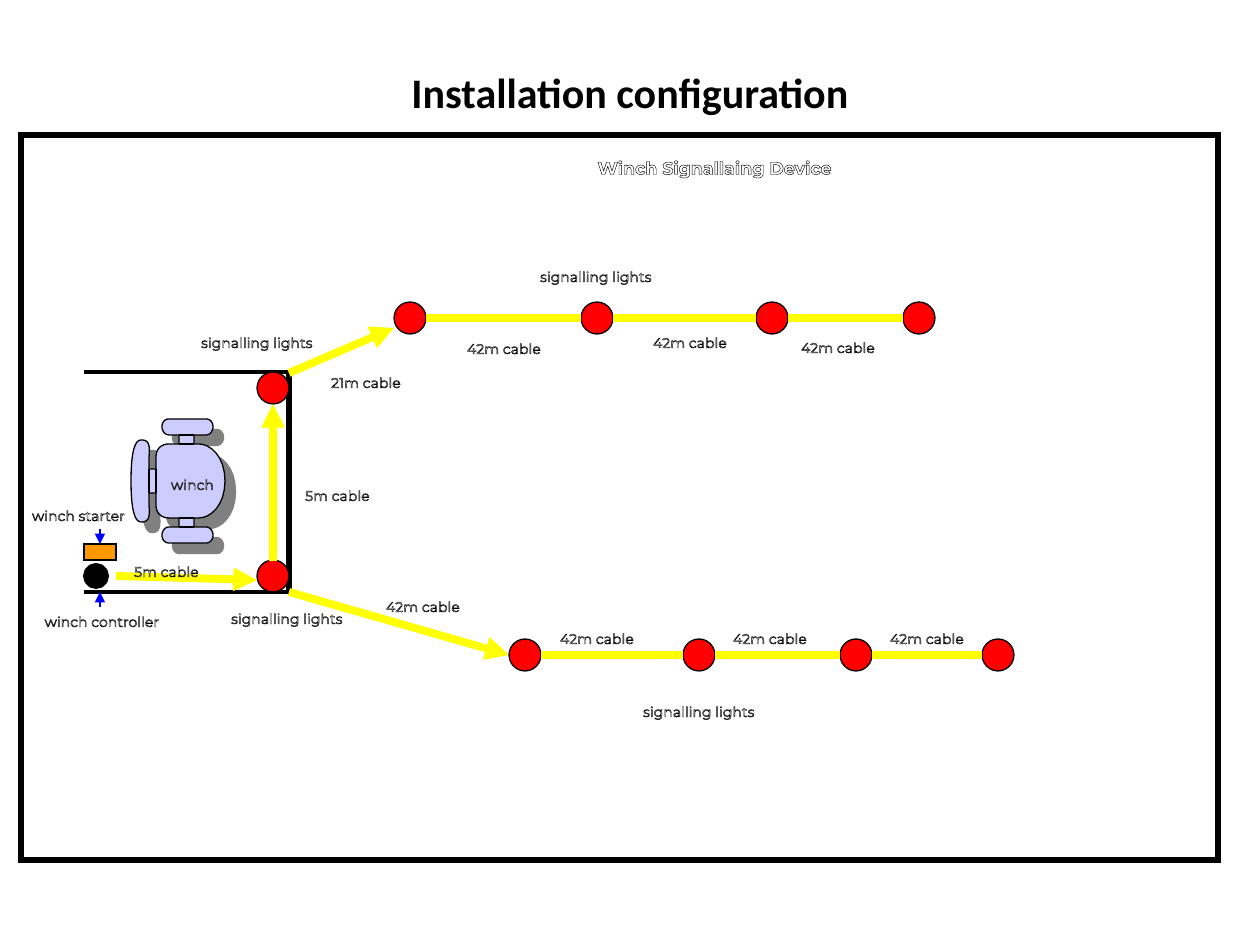
import pptx
import pptx.util
import pptx.dml.color
import pptx.enum.shapes
import pptx.enum.text
import pptx.oxml
import pptx.oxml.ns
import lxml.etree

EMU_PER_PX = 914400 / 126
LIGHT = 32  # diameter of a signalling light
COLORS = {
    "black": "000000", "white": "FFFFFF", "cable": "FFFF00", "light": "FF0000",
    "chair": "CCCCFF", "shadow": "808080", "starter": "FF9900", "pointer": "0000FF",
}
SHAPE = pptx.enum.shapes.MSO_SHAPE
qn = pptx.oxml.ns.qn


def px(length):
    return pptx.util.Emu(round(length * EMU_PER_PX))


def rgb(name):
    return pptx.dml.color.RGBColor.from_string(COLORS[name])


def style(shape, fill, weight=0.75):
    shape.shadow.inherit = False
    if fill:
        shape.fill.solid()
        shape.fill.fore_color.rgb = rgb(fill)
    else:
        shape.fill.background()
    shape.line.color.rgb = rgb("black")
    shape.line.width = pptx.util.Pt(weight)


def add_part(slide, kind, left, top, width, height, fill, weight=0.75):
    part = slide.shapes.add_shape(kind, px(left), px(top), px(width), px(height))
    style(part, fill, weight)
    # Sharp corners
    lxml.etree.SubElement(part._element.spPr.find(qn("a:ln")), qn("a:miter"), lim="800000")


def add_light(slide, left, top):
    add_part(slide, SHAPE.OVAL, left, top, LIGHT, LIGHT, "light")


def add_line(slide, start, end, color, weight, arrow=False):
    line = slide.shapes.add_connector(
        pptx.enum.shapes.MSO_CONNECTOR.STRAIGHT, *map(px, (*start, *end)))
    line.line.color.rgb = rgb(color)
    line.line.width = pptx.util.Pt(weight)
    properties = line._element.spPr
    if arrow:
        lxml.etree.SubElement(properties.find(qn("a:ln")), qn("a:tailEnd"), type="triangle")
    lxml.etree.SubElement(properties, qn("a:effectLst"))


def add_label(slide, text, left, top, width, size=8, bold=False):
    """Outlined white text, centred on the given width."""
    label = slide.shapes.add_textbox(px(left), px(top), px(width), px(20))
    frame = label.text_frame
    frame.word_wrap = False
    frame.margin_left = frame.margin_right = 0
    frame.margin_top = frame.margin_bottom = px(6)
    frame.paragraphs[0].alignment = pptx.enum.text.PP_ALIGN.CENTER
    run = frame.paragraphs[0].add_run()
    run.text = text
    run.font.name = "Montserrat"
    run.font.size = pptx.util.Pt(size)
    run.font.bold = bold
    run.font.color.rgb = rgb("white")
    run._r.get_or_add_rPr().insert(0, pptx.oxml.parse_xml(
        f'<a:ln {pptx.oxml.ns.nsdecls("a")} w="9525"><a:solidFill>'
        f'<a:srgbClr val="{COLORS["black"]}"/></a:solidFill></a:ln>'))


def curve(start, control_1, control_2, end, steps=8):
    """Points along a cubic curve, without its start."""
    points = []
    for step in range(1, steps + 1):
        t = step / steps
        weights = ((1 - t) ** 3, 3 * t * (1 - t) ** 2, 3 * t * t * (1 - t), t ** 3)
        corners = (start, control_1, control_2, end)
        points.append(tuple(sum(w * c[axis] for w, c in zip(weights, corners))
                            for axis in (0, 1)))
    return points


def add_chair(slide, left, middle):
    """Winch seat from above, mirrored about its middle line."""
    # Upper half from back to front: one point is a line, three are a curve
    segments = [
        [(0, -30), (4, -41), (10, -41)], [(15, -41), (20, -40), (18, -24)],
        [(18, -12)], [(25, -12)], [(25, -24)], [(25, -32), (30, -37), (38, -37)],
        [(48, -37)], [(48, -46)], [(38, -46)], [(34, -46), (31, -50), (31, -54)],
        [(31, -59), (34, -62), (38, -62)], [(75, -62)],
        [(79, -62), (82, -59), (82, -54)], [(82, -50), (79, -46), (75, -46)],
        [(63, -46)], [(63, -37)], [(68, -37)], [(79, -37), (94, -25), (94, 0)],
    ]
    upper = [(0, 0)]
    for segment in segments:
        upper += curve(upper[-1], *segment) if len(segment) == 3 else segment
    outline = upper + [(x, -y) for x, y in reversed(upper[1:-1])]
    # Seams where the arms and the back join the seat
    seams = [((48, y), (63, y)) for y in (-46, -37, 37, 46)]
    seams += [((x, -12), (x, 12)) for x in (18, 25)]

    def place(point):
        return px(left + point[0]), px(middle + point[1])

    builder = slide.shapes.build_freeform(*place(outline[0]))
    builder.add_line_segments([place(point) for point in outline[1:]], close=True)
    for start, end in seams:
        builder.move_to(*place(start))
        builder.add_line_segments([place(end)], close=False)
    chair = builder.convert_to_shape()
    style(chair, "chair")
    shadow = lxml.etree.SubElement(
        chair._element.spPr.find(qn("a:effectLst")), qn("a:outerShdw"),
        dist=str(pptx.util.Pt(8.5)), dir="2700000", algn="ctr", rotWithShape="0")
    lxml.etree.SubElement(shadow, qn("a:srgbClr"), val=COLORS["shadow"])


def add_title(slide, left, top, width, height):
    title = slide.shapes.title
    title.left, title.top, title.width, title.height = map(px, (left, top, width, height))
    title.text_frame.vertical_anchor = pptx.enum.text.MSO_ANCHOR.MIDDLE
    paragraph = title.text_frame.paragraphs[0]
    paragraph.alignment = pptx.enum.text.PP_ALIGN.CENTER
    run = paragraph.add_run()
    run.text = "Installation configuration"
    run.font.name = "Calibri"
    run.font.size = pptx.util.Pt(24)
    run.font.bold = True
    run.font.color.rgb = rgb("black")


def add_diagram_frame(slide, left, top, width, height):
    add_part(slide, SHAPE.RECTANGLE, left, top, width, height, None, 3)
    add_label(slide, "Winch Signallaing Device", left + 533, top + 16, 321, 10, True)


def add_winch_bay(slide, left, top, width, height):
    def at(x, y):
        return left + x, top + y

    # Walls
    add_line(slide, at(0, 0), at(width, 0), "black", 2.25)
    add_line(slide, at(width, 0), at(width, height), "black", 3)
    add_line(slide, at(width, height), at(0, height), "black", 2.25)

    # Winch, starter, controller and lights
    add_chair(slide, *at(47, 109))
    add_part(slide, SHAPE.RECTANGLE, *at(0, 172), 32, 16, "starter")
    add_part(slide, SHAPE.OVAL, *at(8, 200), 8, 8, "black", 10)
    for light_top in (0, height - LIGHT):
        add_light(slide, *at(width - LIGHT, light_top))
    add_line(slide, at(width, 0), at(width - LIGHT / 2, 0), "black", 0.75)

    # Cables inside the bay and out to the light runs
    for start, end in [((189, 189), (189, 32)), ((32, 204), (173, 208)),
                       ((205, 1), (310, -44)), ((205, 220), (425, 283))]:
        add_line(slide, at(*start), at(*end), "cable", 4.5, arrow=True)
    for start, end in [(157, 172), (235, 220)]:
        add_line(slide, at(16, start), at(16, end), "pointer", 1, arrow=True)

    for text, x, y, label_width in [
        ("winch starter", -58, 129, 105), ("winch", 84, 98, 49),
        ("winch controller", -45, 235, 126), ("signalling lights", 110, -44, 126),
        ("signalling lights", 140, 232, 126), ("5m cable", 218, 109, 71),
        ("5m cable", 47, 185, 71), ("21m cable", 242, -4, 80),
        ("42m cable", 299, 220, 80),
    ]:
        add_label(slide, text, *at(x, y), label_width)


def add_light_run(slide, left, top, offsets, cable_labels, caption):
    """A row of lights joined by cables; label places are relative to its corner."""
    for offset in offsets:
        add_light(slide, left + offset, top)
    middle = top + LIGHT / 2
    for start, end in zip(offsets, offsets[1:]):
        add_line(slide, (left + start + LIGHT, middle), (left + end, middle), "cable", 4.5)
    for x, y in cable_labels:
        add_label(slide, "42m cable", left + x, top + y, 80)
    add_label(slide, "signalling lights", left + caption[0], top + caption[1], 126)


def main():
    deck = pptx.Presentation()
    deck.slide_width, deck.slide_height = px(1260), px(945)
    slide = deck.slides.add_slide(deck.slide_layouts[5])
    add_title(slide, 63, 38, 1134, 107)
    add_diagram_frame(slide, 21, 135, 1197, 725)
    add_winch_bay(slide, 84, 372, 205, 220)
    add_light_run(slide, 394, 302, (0, 187, 362, 509),
                  [(70, 32), (256, 26), (404, 31)], (139, -40))
    add_light_run(slide, 509, 639, (0, 174, 331, 473),
                  [(48, -15), (221, -15), (378, -15)], (127, 58))
    deck.save("out.pptx")


if __name__ == "__main__":
    main()
